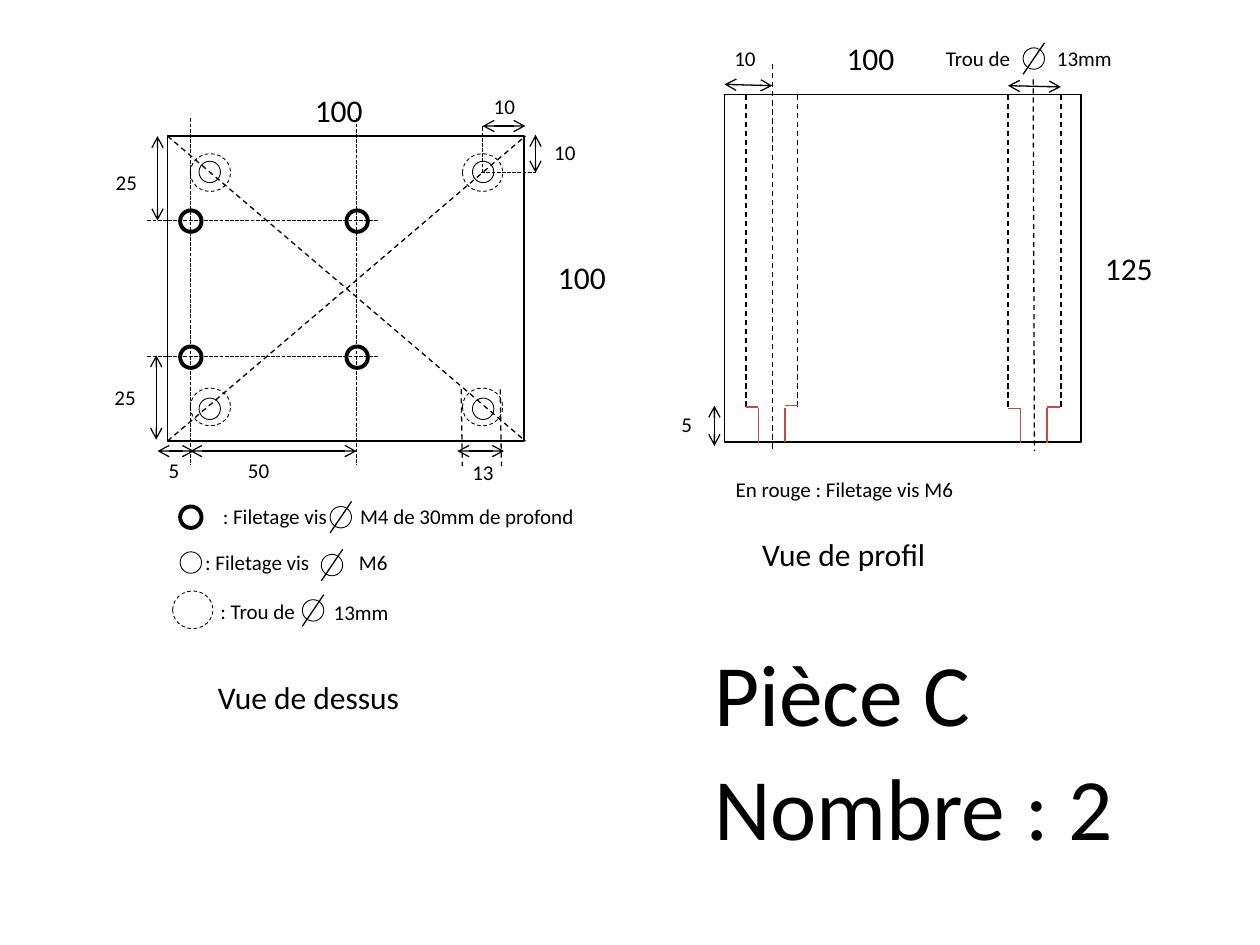
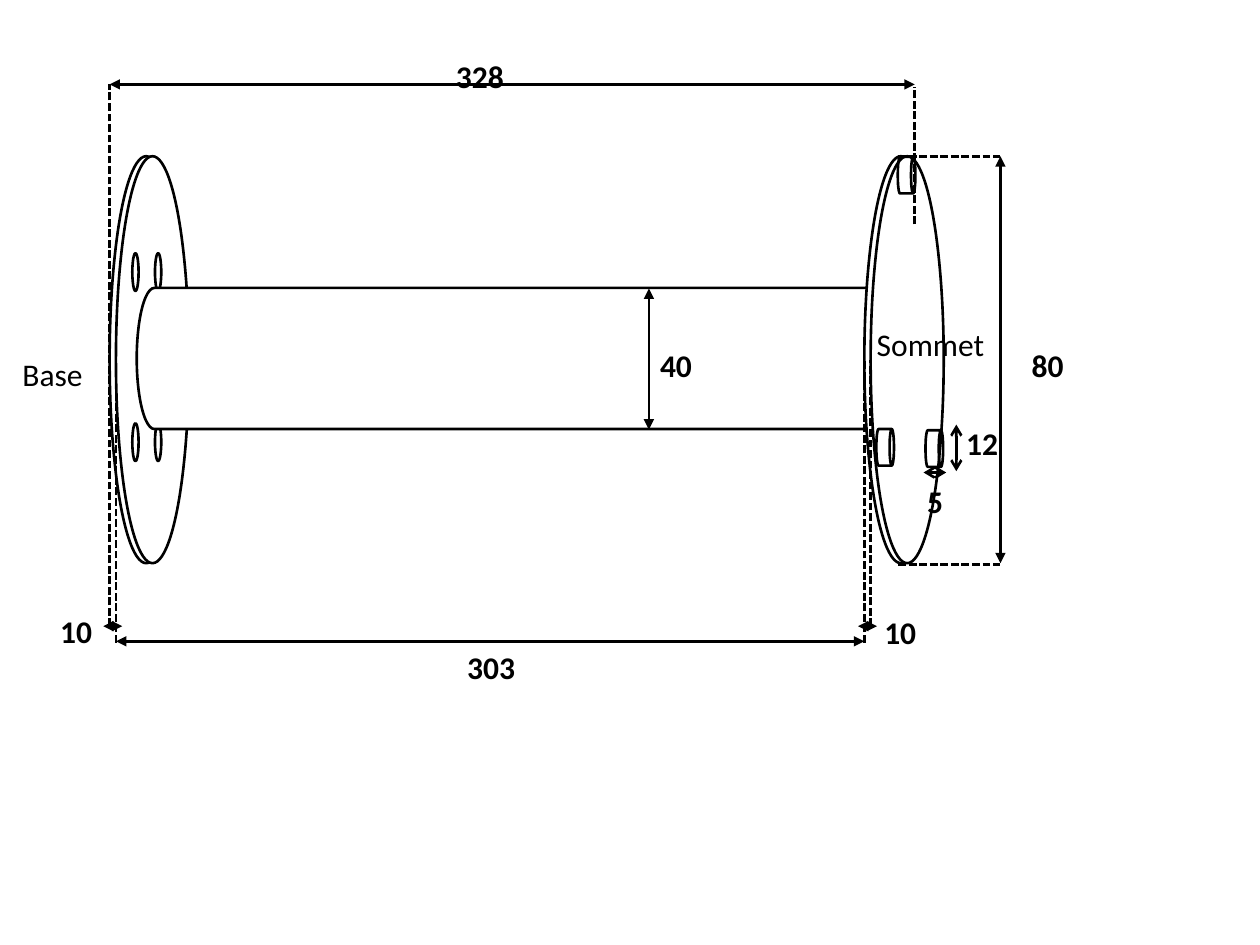
from dataclasses import dataclass
from itertools import product

from lxml.etree import SubElement
from pptx import Presentation
from pptx.dml.color import RGBColor
from pptx.enum.dml import MSO_LINE as DASH
from pptx.enum.shapes import MSO_CONNECTOR as CONNECTOR, MSO_SHAPE as SHAPE
from pptx.enum.text import MSO_AUTO_SIZE as AUTO_SIZE
from pptx.oxml.ns import qn
from pptx.util import Inches, Pt


@dataclass(frozen=True)
class Theme:
    ink: RGBColor = RGBColor(0x00, 0x00, 0x00)
    paper: RGBColor = RGBColor(0xFF, 0xFF, 0xFF)
    thread: RGBColor = RGBColor(0xBF, 0x4C, 0x48)
    font: str = "Calibri"
    note: int = 12
    label: int = 18
    title: int = 50
    fine: float = 0.5
    thin: float = 0.75
    medium: float = 1.5
    thick: float = 2.25


theme = Theme()


def draw_outline(slide, kind, left, top, width, height, weight, dash=None, fill=None, turn=0):
    """Draw a preset shape in ink, see-through unless a fill is given."""
    outline = slide.shapes.add_shape(kind, Inches(left), Inches(top), Inches(width), Inches(height))
    outline.shadow.inherit = False
    outline.rotation = turn
    if fill is None:
        outline.fill.background()
    else:
        outline.fill.solid()
        outline.fill.fore_color.rgb = fill
    outline.line.color.rgb = theme.ink
    outline.line.width = Pt(weight)
    if dash:
        outline.line.dash_style = dash


def draw_line(slide, x1, y1, x2, y2, weight=theme.thin, dash=None, arrow=None, color=theme.ink):
    """Draw a straight line; arrow names the head put on both ends."""
    line = slide.shapes.add_connector(CONNECTOR.STRAIGHT, Inches(x1), Inches(y1), Inches(x2), Inches(y2))
    line.line.color.rgb = color
    line.line.width = Pt(weight)
    if dash:
        line.line.dash_style = dash
    properties = line.element.spPr
    if arrow:
        for end in ("a:headEnd", "a:tailEnd"):
            SubElement(properties.find(qn("a:ln")), qn(end), type=arrow)
    SubElement(properties, qn("a:effectLst"))


deck = Presentation()
deck.slide_width, deck.slide_height = Inches(10), Inches(7.5)
blank = deck.slide_layouts[6]
block = deck.slides.add_slide(blank)
spool = deck.slides.add_slide(blank)

# Block, top view
SCREW = 0.17
BORE_WIDTH, BORE_HEIGHT = 0.32, 0.3
draw_outline(block, SHAPE.RECTANGLE, 1.33, 1.08, 2.83, 2.42, theme.thin)
draw_line(block, 1.33, 1.08, 4.17, 3.5, dash=DASH.DASH)
draw_line(block, 1.33, 3.5, 4.17, 1.08, dash=DASH.DASH)

m6_screws = [*product((1.58, 3.75), (1.28, 3.16)), (1.43, 4.38)]
m4_screws = [*product((1.43, 2.75), (1.67, 2.75)), (1.43, 4.02)]
bores = [*product((1.51, 3.67), (1.22, 3.08)), (1.37, 4.69)]
for left, top in m6_screws:
    draw_outline(block, SHAPE.OVAL, left, top, SCREW, SCREW, theme.fine)
for left, top in m4_screws:
    draw_outline(block, SHAPE.OVAL, left, top, SCREW, SCREW, theme.thick)
for left, top in bores:
    draw_outline(block, SHAPE.OVAL, left, top, BORE_WIDTH, BORE_HEIGHT, theme.fine, DASH.DASH)

for y in (1.75, 2.83):
    draw_line(block, 1.17, y, 3, y, dash=DASH.SQUARE_DOT)
for x in (1.51, 2.83):
    draw_line(block, x, 0.94, x, 3.69, dash=DASH.SQUARE_DOT)
draw_line(block, 3.83, 1.37, 3.83, 1, dash=DASH.SQUARE_DOT)
draw_line(block, 3.82, 1.37, 4.25, 1.37, dash=DASH.SQUARE_DOT)
for x in (3.66, 3.97):
    draw_line(block, x, 3.09, x + 0.01, 3.7, dash=DASH.DASH)

# Block, side view
draw_outline(block, SHAPE.RECTANGLE, 5.75, 0.75, 2.83, 2.76, theme.thin)
for x in (5.92, 6.33, 8, 8.42):
    draw_line(block, x, 0.75, x, 3.24, dash=DASH.DASH)
draw_line(block, 6.13, 0.51, 6.13, 3.58, dash=DASH.DASH)
draw_line(block, 8.2, 0.63, 8.21, 3.58, dash=DASH.DASH)
for left, shoulder in ((5.92, 3.23), (8, 3.24)):
    draw_line(block, left, shoulder, left + 0.1, shoulder, color=theme.thread)
    draw_line(block, left + 0.31, shoulder - 0.01, left + 0.41, shoulder - 0.01, color=theme.thread)
    for x in (left + 0.1, left + 0.31):
        draw_line(block, x, 3.24, x, shoulder + 0.28, color=theme.thread)

block_dimensions = [
    (4.25, 1.07, 4.25, 1.37),
    (3.83, 1, 4.17, 1),
    (1.25, 1.08, 1.25, 1.75),
    (1.24, 2.82, 1.24, 3.49),
    (1.25, 3.58, 1.54, 3.58),
    (1.51, 3.58, 2.83, 3.58),
    (3.63, 3.58, 4, 3.58),
    (5.75, 0.67, 6.13, 0.68),
    (8, 0.68, 8.42, 0.69),
    (5.67, 3.22, 5.67, 3.54),
]
for ends in block_dimensions:
    draw_line(block, *ends, arrow="arrow")

# Diameter signs
for left, top in ((2.62, 4.02), (2.55, 4.4), (2.4, 4.76), (8.12, 0.38)):
    draw_outline(block, SHAPE.OVAL, left, top, SCREW, SCREW, theme.fine)
    draw_line(block, left + SCREW, top - 0.04, left, top + 0.21)

# Spool: base, tube and top
FLANGE_TOP, FLANGE_WIDTH, FLANGE_HEIGHT = 1.24, 0.58, 3.23
spool_parts = [
    *[(SHAPE.OVAL, x, FLANGE_TOP, FLANGE_WIDTH, FLANGE_HEIGHT, 0) for x in (0.87, 0.92)],
    *[(SHAPE.OVAL, x, y, 0.05, 0.3, 0) for x, y in product((1.05, 1.23), (2.01, 3.36))],
    (SHAPE.CAN, 3.62, -0.25, 1.12, 6.19, 90),
    *[(SHAPE.OVAL, x, FLANGE_TOP, FLANGE_WIDTH, FLANGE_HEIGHT, 0) for x in (6.86, 6.91)],
]
for kind, left, top, width, height, turn in spool_parts:
    draw_outline(spool, kind, left, top, width, height, theme.medium, fill=theme.paper, turn=turn)
for left, top in ((7.27, 3.49), (7.05, 1.32), (6.88, 3.48)):
    draw_outline(spool, SHAPE.CAN, left, top, 0.29, 0.14, theme.medium, turn=90)

spool_guides = [
    (0.87, 4.97, 0.87, 0.67),
    (7.26, 1.78, 7.26, 0.69),
    (0.92, 5.1, 0.92, 2.77),
    (6.91, 4.97, 6.91, 2.86),
    (6.86, 5.1, 6.86, 2.86),
    (7.13, 1.24, 7.94, 1.24),
    (7.13, 4.48, 7.94, 4.48),
]
for ends in spool_guides:
    draw_line(spool, *ends, theme.medium, DASH.SQUARE_DOT)

spool_dimensions = [
    (0.87, 0.67, 7.26, 0.67, "triangle"),
    (0.92, 5.09, 6.86, 5.09, "triangle"),
    (5.15, 3.41, 5.15, 2.29, "triangle"),
    (7.94, 4.47, 7.94, 1.24, "triangle"),
    (0.97, 4.97, 0.82, 4.97, "triangle"),
    (6.96, 4.97, 6.81, 4.97, "triangle"),
    (7.33, 3.75, 7.51, 3.75, "arrow"),
    (7.59, 3.37, 7.59, 3.74, "arrow"),
]
for *ends, head in spool_dimensions:
    draw_line(spool, *ends, theme.medium, arrow=head)

# Labels: text, left, top, width
block_notes = [
    ("10", 3.82, 0.69, 0.43),
    ("10", 4.3, 1.06, 0.43),
    ("25", 0.82, 1.3, 0.43),
    ("25", 0.81, 3, 0.43),
    ("5", 1.24, 3.58, 0.43),
    ("50", 1.87, 3.58, 0.43),
    ("13", 3.65, 3.6, 0.43),
    (": Filetage vis", 1.67, 3.95, 1.17),
    ("M4 de 30mm de profond", 2.76, 3.95, 2.07),
    (": Filetage vis", 1.53, 4.31, 1.06),
    ("M6", 2.75, 4.31, 0.83),
    (": Trou de", 1.65, 4.7, 1.35),
    ("13mm", 2.55, 4.71, 0.83),
    ("10", 5.73, 0.31, 0.43),
    ("Trou de", 7.41, 0.31, 0.83),
    ("13mm", 8.29, 0.31, 0.83),
    ("5", 5.31, 3.22, 0.43),
    ("En rouge : Filetage vis M6", 5.74, 3.73, 2.39),
]
block_labels = [
    ("100", 2.4, 0.67, 0.71),
    ("100", 4.33, 2, 1.08),
    ("100", 6.62, 0.26, 1.08),
    ("125", 8.67, 1.93, 1.08),
    ("Vue de dessus", 1.63, 5.33, 2.41),
    ("Vue de profil", 5.95, 4.2, 2.41),
]
block_titles = [("Pièce C", 5.57, 5.02, 4.45), ("Nombre : 2", 5.57, 5.93, 4.45)]
spool_labels = [("Base", 0.08, 2.77, 0.73), ("Sommet", 6.86, 2.53, 1.08)]
spool_sizes = [
    ("328", 3.52, 0.4, 0.59),
    ("303", 3.61, 5.09, 0.59),
    ("40", 5.14, 2.7, 0.46),
    ("80", 8.09, 2.7, 0.46),
    ("10", 0.38, 4.81, 0.46),
    ("10", 6.92, 4.82, 0.46),
    ("5", 7.26, 3.78, 0.33),
    ("12", 7.57, 3.32, 0.46),
]
lettering = [
    (block, block_notes, theme.note, 0.3, False),
    (block, block_labels, theme.label, 0.4, False),
    (block, block_titles, theme.title, 0.94, False),
    (spool, spool_labels, theme.label, 0.4, False),
    (spool, spool_sizes, theme.label, 0.4, True),
]
for slide, entries, size, height, bold in lettering:
    for text, left, top, width in entries:
        box = slide.shapes.add_textbox(Inches(left), Inches(top), Inches(width), Inches(height))
        frame = box.text_frame
        frame.text = text
        frame.word_wrap = not bold
        frame.auto_size = AUTO_SIZE.SHAPE_TO_FIT_TEXT
        font = frame.paragraphs[0].runs[0].font
        font.name, font.size, font.bold = theme.font, Pt(size), bold
        font.color.rgb = theme.ink

deck.save("out.pptx")
